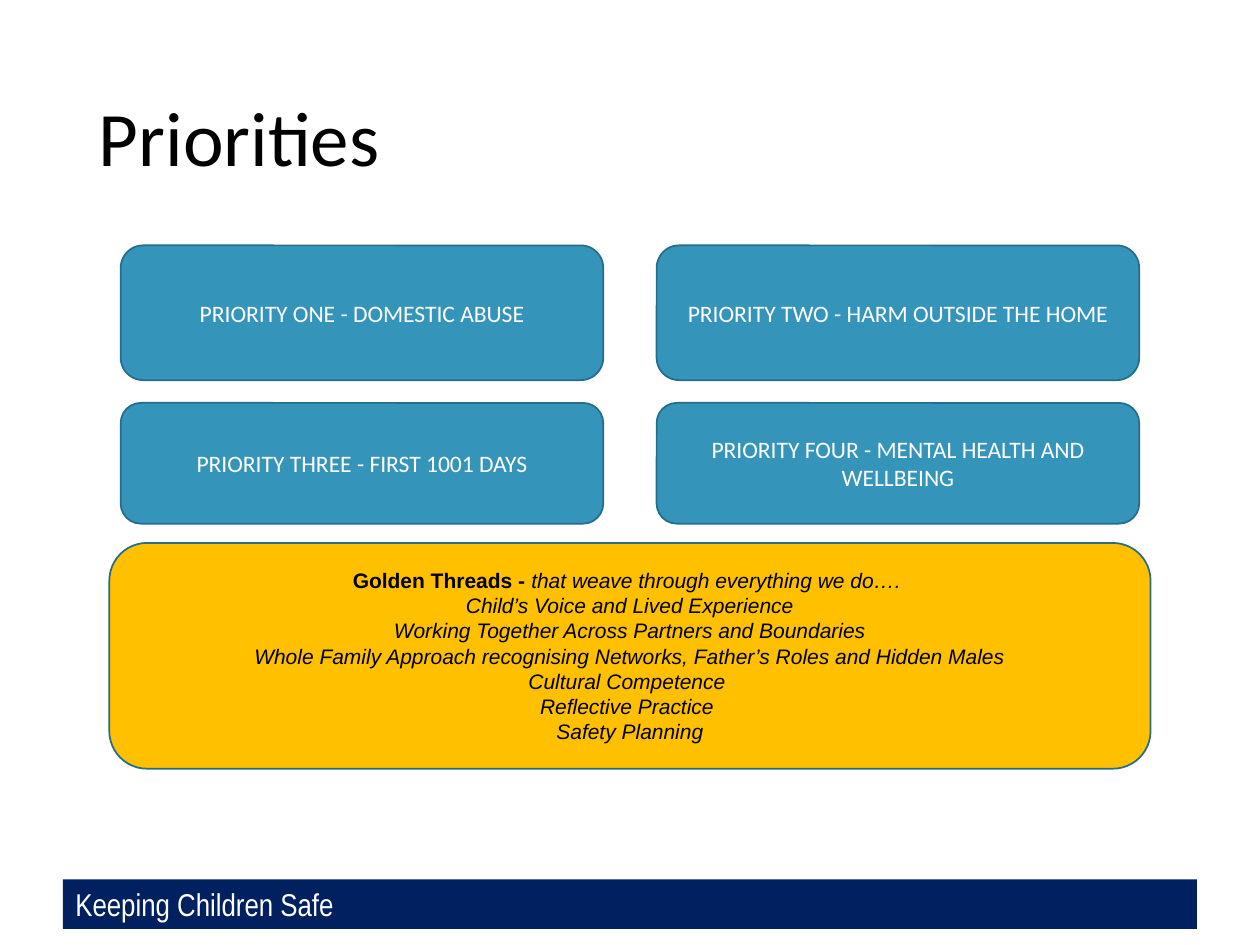
from dataclasses import dataclass

from pptx import Presentation
from pptx.dml.color import RGBColor
from pptx.enum.shapes import MSO_SHAPE
from pptx.enum.text import MSO_ANCHOR, PP_ALIGN
from pptx.util import Pt

RECTANGLE = MSO_SHAPE.RECTANGLE
ROUNDED = MSO_SHAPE.ROUNDED_RECTANGLE
MIDDLE = MSO_ANCHOR.MIDDLE
LEFT, CENTER = PP_ALIGN.LEFT, PP_ALIGN.CENTER


@dataclass(frozen=True)
class Theme:
    """Colours, fonts and type sizes of the slide."""
    navy: str = "002060"
    teal: str = "3494BA"
    outline: str = "266D8A"
    gold: str = "FFC000"
    black: str = "000000"
    white: str = "FFFFFF"
    body_font: str = "Calibri"
    threads_font: str = "Arial"
    footer_font: str = "Arial Narrow"
    title_size: float = 44
    footer_size: float = 18
    priority_size: float = 13.5
    threads_size: float = 12


THEME = Theme()

PRIORITY_ROWS = [
    (0, 77, ["PRIORITY ONE - DOMESTIC ABUSE",
             "PRIORITY TWO - HARM OUTSIDE THE HOME"]),
    (90, 69, ["PRIORITY THREE - FIRST 1001 DAYS",
              "PRIORITY FOUR - MENTAL HEALTH AND WELLBEING"]),
]
THREADS_LEAD = "Golden Threads - "
THREADS = [
    "that weave through everything we do…. ",
    "Child’s Voice and Lived Experience",
    "Working Together Across Partners and Boundaries",
    "Whole Family Approach recognising Networks, Father’s Roles and Hidden Males",
    "Cultural Competence ",
    "Reflective Practice ",
    "Safety Planning",
]


def add_text(paragraph, text, *, font, size, color, align=LEFT, bold=False, italic=False):
    """Append a formatted run to a paragraph."""
    paragraph.alignment = align
    run = paragraph.add_run()
    run.text = text
    run.font.name = font
    run.font.size = Pt(size)
    run.font.color.rgb = RGBColor.from_string(color)
    run.font.bold = bold
    run.font.italic = italic


def prepare_frame(shape):
    """Wrap and vertically centre a shape's text, and return its frame."""
    frame = shape.text_frame
    frame.word_wrap = True
    frame.vertical_anchor = MIDDLE
    return frame


def add_panel(slide, box, preset, fill, outline=None):
    """Add a flat filled shape and return its text frame."""
    panel = slide.shapes.add_shape(preset, *map(Pt, box))
    panel.shadow.inherit = False
    panel.fill.solid()
    panel.fill.fore_color.rgb = RGBColor.from_string(fill)
    if outline:
        panel.line.color.rgb = RGBColor.from_string(outline)
        panel.line.width = Pt(1)
    else:
        panel.line.fill.background()
    return prepare_frame(panel)


def add_title(slide, box):
    """Place the slide title in the box."""
    frame = prepare_frame(slide.shapes.add_textbox(*map(Pt, box)))
    heading = frame.paragraphs[0]
    heading.line_spacing = 0.9
    add_text(heading, "Priorities", font=THEME.body_font,
             size=THEME.title_size, color=THEME.black)


def add_priorities(slide, box, gap=30.5):
    """Place the priority cards in two equal columns across the box."""
    left, top, width, _ = box
    card_width = (width - gap) / 2
    for offset, height, priorities in PRIORITY_ROWS:
        for column, priority in enumerate(priorities):
            card = (left + column * (card_width + gap), top + offset, card_width, height)
            frame = add_panel(slide, card, ROUNDED, THEME.teal, THEME.outline)
            add_text(frame.paragraphs[0], priority, font=THEME.body_font,
                     size=THEME.priority_size, color=THEME.white, align=CENTER)


def add_golden_threads(slide, box):
    """Place the golden panel listing the shared threads."""
    frame = add_panel(slide, box, ROUNDED, THEME.gold, THEME.outline)
    style = dict(font=THEME.threads_font, size=THEME.threads_size,
                 color=THEME.black, align=CENTER)
    for index, thread in enumerate(THREADS):
        line = frame.add_paragraph() if index else frame.paragraphs[0]
        if index == 0:
            add_text(line, THREADS_LEAD, bold=True, **style)
        add_text(line, thread, italic=True, **style)


def add_footer(slide, box):
    """Place the navy footer band."""
    frame = add_panel(slide, box, RECTANGLE, THEME.navy)
    add_text(frame.paragraphs[0], "Keeping Children Safe", font=THEME.footer_font,
             size=THEME.footer_size, color=THEME.white)


def main():
    """Build and save the slide."""
    deck = Presentation()
    deck.slide_width, deck.slide_height = Pt(720), Pt(540)
    slide = deck.slides.add_slide(deck.slide_layouts[6])
    add_footer(slide, (36, 502.5, 648, 28.25))
    add_title(slide, (49.5, 28.75, 621, 104.5))
    add_priorities(slide, (69, 140.25, 582, 159))
    add_golden_threads(slide, (62.5, 310.25, 595, 129))
    deck.save("out.pptx")


if __name__ == "__main__":
    main()
